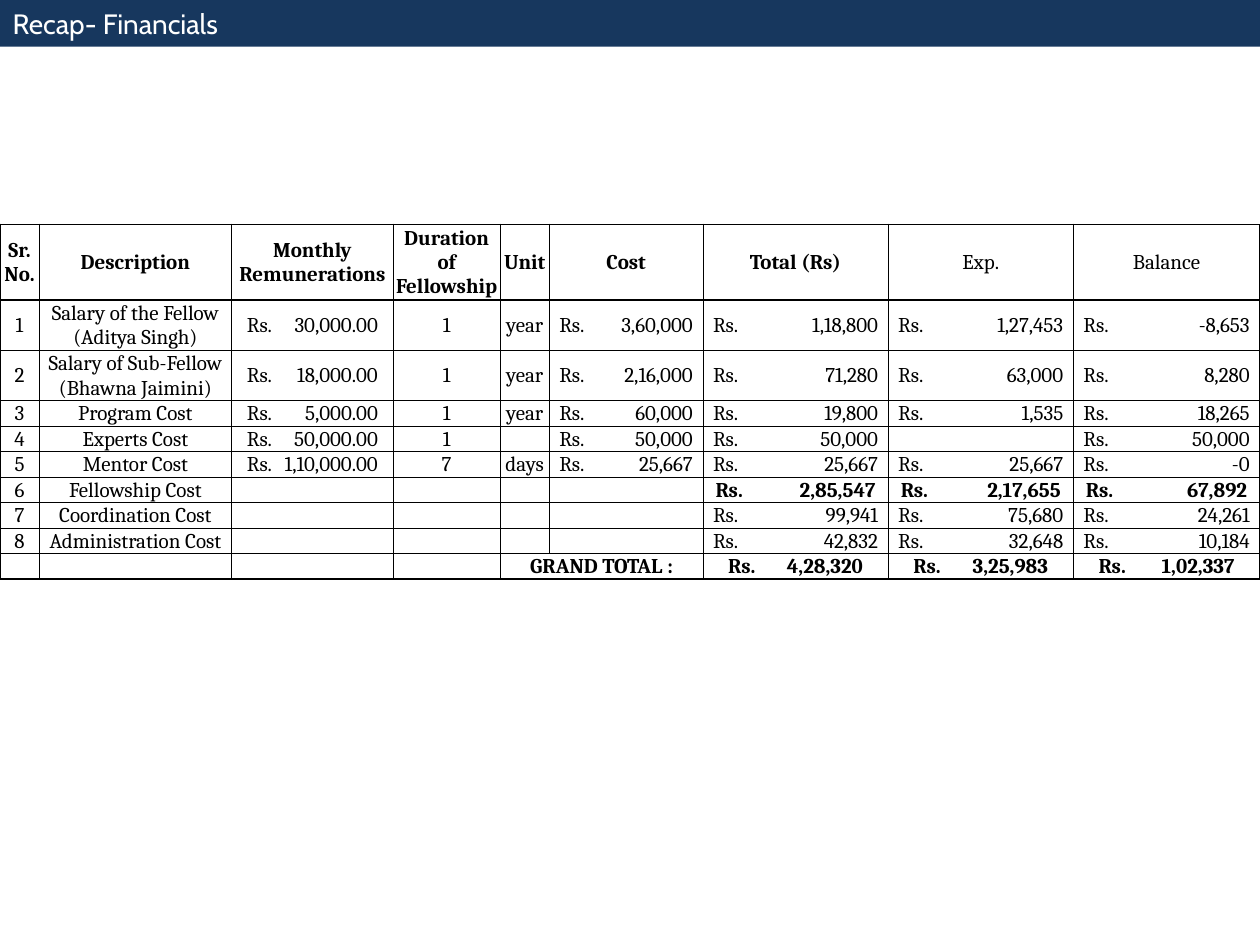
import pptx
import pptx.dml.color
import pptx.enum.text
import pptx.oxml.ns
import pptx.util
from lxml import etree
from pptx.util import Inches

NAVY = pptx.dml.color.RGBColor(0x17, 0x37, 0x5E)
WHITE = pptx.dml.color.RGBColor(0xFF, 0xFF, 0xFF)
BLACK = pptx.dml.color.RGBColor(0x00, 0x00, 0x00)

COLUMN_WIDTHS = [0.31, 1.53, 1.28, 0.85, 0.39, 1.22, 1.47, 1.47, 1.48]
ROW_HEIGHTS = [0.6, 0.4, 0.4] + [0.2] * 7
TABLE_WIDTH = sum(COLUMN_WIDTHS)
MONTHLY, UNIT, COST, TOTAL = 2, 4, 5, 6
FELLOWSHIP_ROW, GRAND_TOTAL_ROW = 6, 9
AMOUNT_COLUMNS = {MONTHLY, COST, TOTAL, 7, 8}

HEADERS = ["Sr. No.", "Description", "Monthly\nRemunerations",
           "Duration\nof\nFellowship", "Unit", "Cost", "Total (Rs)", "Exp.", "Balance"]
BUDGET = [
    ["1", "Salary of the Fellow (Aditya Singh)", "30,000.00", "1", "year",
     "3,60,000", "1,18,800", "1,27,453", "-8,653"],
    ["2", "Salary of Sub-Fellow (Bhawna Jaimini)", "18,000.00", "1", "year",
     "2,16,000", "71,280", "63,000", "8,280"],
    ["3", "Program Cost", "5,000.00", "1", "year", "60,000", "19,800", "1,535", "18,265"],
    ["4", "Experts Cost", "50,000.00", "1", "", "50,000", "50,000", "", "50,000"],
    ["5", "Mentor Cost", "1,10,000.00", "7", "days", "25,667", "25,667", "25,667", "-0"],
    ["6", "Fellowship Cost", "", "", "", "", "2,85,547", "2,17,655", "67,892"],
    ["7", "Coordination Cost", "", "", "", "", "99,941", "75,680", "24,261"],
    ["8", "Administration Cost", "", "", "", "", "42,832", "32,648", "10,184"],
    ["", "", "", "", "GRAND TOTAL :", "", "4,28,320", "3,25,983", "1,02,337"],
]


def add_title_bar(slide, text):
    title = slide.shapes.title
    title.left, title.top = Inches(0), Inches(0)
    title.width, title.height = Inches(10), Inches(0.37)
    title.fill.solid()
    title.fill.fore_color.rgb = NAVY
    frame = title.text_frame
    frame.text = text
    frame.vertical_anchor = pptx.enum.text.MSO_ANCHOR.MIDDLE
    heading = frame.paragraphs[0]
    heading.alignment = pptx.enum.text.PP_ALIGN.LEFT
    heading.font.name = "Cabin"
    heading.font.size = pptx.util.Pt(16)
    heading.font.color.rgb = WHITE


def set_borders(cell, row, column):
    """Thick rules around the table, the header and the grand total."""
    thick = {
        "lnL": column == 0,
        "lnR": column == len(COLUMN_WIDTHS) - 1,
        "lnT": row in (0, 1, GRAND_TOTAL_ROW),
        "lnB": row in (0, GRAND_TOTAL_ROW - 1, GRAND_TOTAL_ROW),
    }
    properties = cell._tc.get_or_add_tcPr()
    for side, is_thick in thick.items():
        line = etree.SubElement(properties, pptx.oxml.ns.qn(f"a:{side}"),
                                w=str(pptx.util.Pt(1 if is_thick else 0.5)))
        fill = etree.SubElement(line, pptx.oxml.ns.qn("a:solidFill"))
        etree.SubElement(fill, pptx.oxml.ns.qn("a:srgbClr"), val=str(BLACK))


def amount_inset(row, column):
    if row == GRAND_TOTAL_ROW:
        return 0.2
    if column == MONTHLY:
        return 0.12
    return 0.1 if row == FELLOWSHIP_ROW else 0.08


def add_right_tab(paragraph, position):
    tabs = etree.SubElement(paragraph._p.get_or_add_pPr(), pptx.oxml.ns.qn("a:tabLst"))
    etree.SubElement(tabs, pptx.oxml.ns.qn("a:tab"), pos=str(Inches(position)), algn="r")


def format_text(paragraph, bold):
    paragraph.font.name = "Cambria"
    paragraph.font.size = pptx.util.Pt(12)
    paragraph.font.bold = bold
    paragraph.font.color.rgb = BLACK
    # An empty cell takes its line height from the end mark
    if not paragraph.text:
        etree.SubElement(paragraph._p, pptx.oxml.ns.qn("a:endParaRPr"), sz="1200")


def fill_cell(cell, row, column, text):
    is_amount = row > 0 and column in AMOUNT_COLUMNS and text != ""
    is_bold = (row == 0 and column <= TOTAL or row == GRAND_TOTAL_ROW
               or row == FELLOWSHIP_ROW and column >= TOTAL)
    inset = amount_inset(row, column) if is_amount else 0.01
    cell.margin_left = Inches(inset)
    cell.margin_right = cell.margin_top = Inches(0.01)
    cell.margin_bottom = Inches(0)
    cell.vertical_anchor = pptx.enum.text.MSO_ANCHOR.MIDDLE
    cell.text_frame.text = f"Rs.\t{text}" if is_amount else text
    for paragraph in cell.text_frame.paragraphs:
        if is_amount:
            paragraph.alignment = pptx.enum.text.PP_ALIGN.LEFT
            add_right_tab(paragraph, COLUMN_WIDTHS[column] - 2 * inset)
        else:
            paragraph.alignment = pptx.enum.text.PP_ALIGN.CENTER
        format_text(paragraph, is_bold)
    set_borders(cell, row, column)
    cell.fill.background()


def add_budget_table(slide):
    rows = [HEADERS] + BUDGET
    budget = slide.shapes.add_table(
        len(rows), len(HEADERS), Inches(0), Inches(1.78),
        Inches(TABLE_WIDTH), Inches(sum(ROW_HEIGHTS))).table
    budget.first_row = False
    budget.horz_banding = False
    for column, width in zip(budget.columns, COLUMN_WIDTHS):
        column.width = Inches(width)
    for row, height in zip(budget.rows, ROW_HEIGHTS):
        row.height = Inches(height)
    for row, texts in enumerate(rows):
        for column, text in enumerate(texts):
            fill_cell(budget.cell(row, column), row, column, text)
    # The grand total label spans the unit and cost columns
    budget.cell(GRAND_TOTAL_ROW, UNIT).merge(budget.cell(GRAND_TOTAL_ROW, COST))


def main():
    deck = pptx.Presentation()
    deck.slide_width, deck.slide_height = Inches(10), Inches(7.5)
    slide = deck.slides.add_slide(deck.slide_layouts.get_by_name("Title Only"))
    add_title_bar(slide, "Recap- Financials")
    add_budget_table(slide)
    deck.save("out.pptx")


if __name__ == "__main__":
    main()
